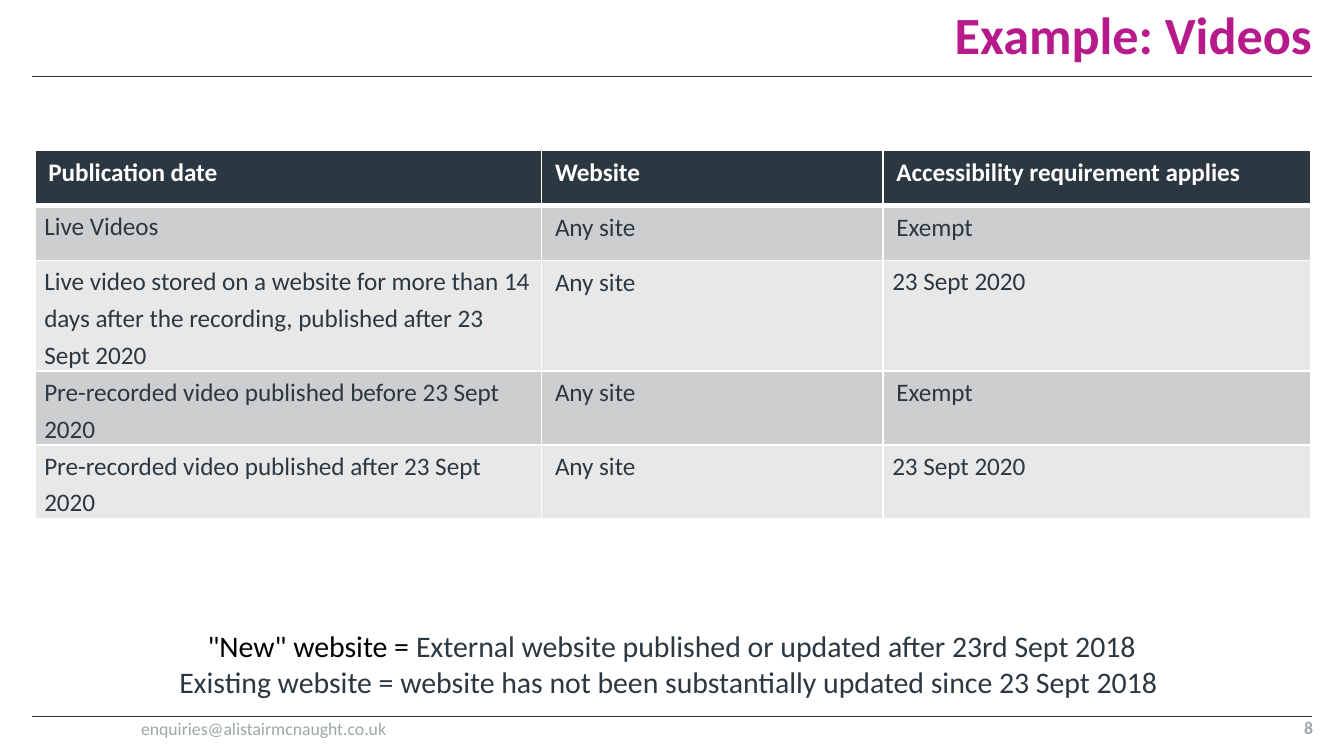
"""Build the slide on accessibility dates for videos."""
from typing import NamedTuple

from lxml.etree import SubElement
from pptx import Presentation
from pptx.dml.color import RGBColor
from pptx.enum.shapes import MSO_CONNECTOR as Connector, MSO_SHAPE as Preset
from pptx.enum.text import MSO_ANCHOR as Anchor, PP_ALIGN as Align
from pptx.oxml import parse_xml
from pptx.oxml.ns import nsdecls, qn
from pptx.util import Inches, Pt

SLIDE_WIDTH = 10
INK, PINK, WHITE, GREY = "2C3841", "B71A8B", "FFFFFF", "9BA7A8"
BANDS = ("CDCECF", "E8E8E9")
HEADINGS = ("Publication date", "Website", "Accessibility requirement applies")
COLUMN_WIDTHS = (3.77, 2.54, 3.18)
ROW_HEIGHT = 0.41


class Rule(NamedTuple):
    """A video type and when its requirement applies."""
    video: str
    applies: str


class Label(NamedTuple):
    """A single line of text and its place."""
    text: str
    box: tuple
    size: float
    color: str
    bold: bool = False
    align: Align = Align.RIGHT
    anchor: Anchor = Anchor.TOP
    top_inset: float = 0
    spacing: float = 1.0


RULES = (
    Rule("Live Videos", "Exempt"),
    Rule("Live video stored on a website for more than 14 days after the recording, "
         "published after 23 Sept 2020", "23 Sept 2020"),
    Rule("Pre-recorded video published before 23 Sept 2020", "Exempt"),
    Rule("Pre-recorded video published after 23 Sept 2020", "23 Sept 2020"),
)
LABELS = (
    Label("Example: Videos", (1.76, 0, 8, 0.49), 28, PINK, True,
          anchor=Anchor.BOTTOM, spacing=0.9),
    Label(" enquiries@alistairmcnaught.co.uk", (1.02, 5.33, 7.95, 0.18), 9.5, GREY,
          align=Align.LEFT, top_inset=0.01),
    Label("8", (8.98, 5.33, 0.79, 0.18), 9.5, GREY, True),
)
DEFINITIONS = (
    (('"New" website = ', "000000"),
     ("External website published or updated after 23rd Sept 2018", INK)),
    (("Existing website = website has not been substantially updated since 23 Sept 2018 ", INK),),
)


def rgb(color: str) -> RGBColor:
    """Turn a hex string into a colour."""
    return RGBColor.from_string(color)


def add_run(paragraph, text: str, size: float, color: str, bold: bool = False) -> None:
    """Add one styled run."""
    run = paragraph.add_run()
    run.text = text
    run.font.name = "Calibri"
    run.font.size = Pt(size)
    run.font.bold = bold
    run.font.color.rgb = rgb(color)


def add_divider(slide, y: float) -> None:
    """Draw a thin line across the slide."""
    divider = slide.shapes.add_connector(
        Connector.STRAIGHT, Inches(0.24), Inches(y), Inches(9.76), Inches(y))
    divider.line.color.rgb = rgb(INK)
    divider.line.width = Pt(0.5)
    SubElement(divider.element.spPr, qn("a:effectLst"))


def add_label(slide, label: Label) -> None:
    """Draw a text box without side insets."""
    frame = slide.shapes.add_textbox(*map(Inches, label.box)).text_frame
    frame.word_wrap = True
    frame.margin_left = frame.margin_right = frame.margin_bottom = 0
    frame.margin_top = Inches(label.top_inset)
    frame.vertical_anchor = label.anchor
    paragraph = frame.paragraphs[0]
    paragraph.alignment = label.align
    paragraph.line_spacing = label.spacing
    add_run(paragraph, label.text, label.size, label.color, label.bold)


def fill_cell(cell, text: str, fill: str, header: bool, tight: bool) -> None:
    """Write, colour and outline one table cell."""
    paragraph = cell.text_frame.paragraphs[0]
    if tight:
        cell.margin_left = cell.margin_right = Inches(0.07)
        cell.margin_top = cell.margin_bottom = 0
        paragraph.line_spacing = 1.2
    add_run(paragraph, text, 13.5, WHITE if header else INK, header)
    cell.fill.solid()
    cell.fill.fore_color.rgb = rgb(fill)
    properties = cell._tc.get_or_add_tcPr()
    for index, side in enumerate("LRTB"):
        width = Pt(3 if header and side == "B" else 1)
        properties.insert(index, parse_xml(
            f'<a:ln{side} {nsdecls("a")} w="{width}"><a:solidFill>'
            f'<a:srgbClr val="{WHITE}"/></a:solidFill></a:ln{side}>'))


def add_rules_table(slide) -> None:
    """Draw the table of publication dates."""
    rows = [HEADINGS] + [(rule.video, "Any site", rule.applies) for rule in RULES]
    height = Inches(2.68)
    holder = slide.shapes.add_table(
        len(rows), len(HEADINGS), Inches(0.26), Inches(1.12), Inches(9.49), height)
    table = holder.table
    for column, width in zip(table.columns, COLUMN_WIDTHS):
        column.width = Inches(width)
    for r, texts in enumerate(rows):
        table.rows[r].height = Inches(ROW_HEIGHT)
        header = r == 0
        fill = INK if header else BANDS[(r - 1) % 2]
        for c, text in enumerate(texts):
            tight = not header and (c == 0 or text == "23 Sept 2020")
            fill_cell(table.cell(r, c), text, fill, header, tight)
    holder.height = height


def add_definitions(slide) -> None:
    """Draw the panel that explains new and existing websites."""
    panel = slide.shapes.add_shape(
        Preset.RECTANGLE, Inches(0.74), Inches(4.67), Inches(8.52), Inches(0.53))
    panel.shadow.inherit = False
    panel.fill.solid()
    panel.fill.fore_color.rgb = rgb(WHITE)
    panel.line.fill.background()
    frame = panel.text_frame
    frame.word_wrap = True
    frame.vertical_anchor = Anchor.MIDDLE
    for index, parts in enumerate(DEFINITIONS):
        paragraph = frame.add_paragraph() if index else frame.paragraphs[0]
        paragraph.alignment = Align.CENTER
        for text, color in parts:
            add_run(paragraph, text, 16, color)


def main() -> None:
    """Assemble and save the slide."""
    deck = Presentation()
    deck.slide_width = Inches(SLIDE_WIDTH)
    deck.slide_height = Inches(SLIDE_WIDTH * 9 / 16)
    slide = deck.slides.add_slide(deck.slide_layouts[6])
    for y in (0.57, 5.33):
        add_divider(slide, y)
    add_rules_table(slide)
    for label in LABELS:
        add_label(slide, label)
    add_definitions(slide)
    deck.save("out.pptx")


if __name__ == "__main__":
    main()
